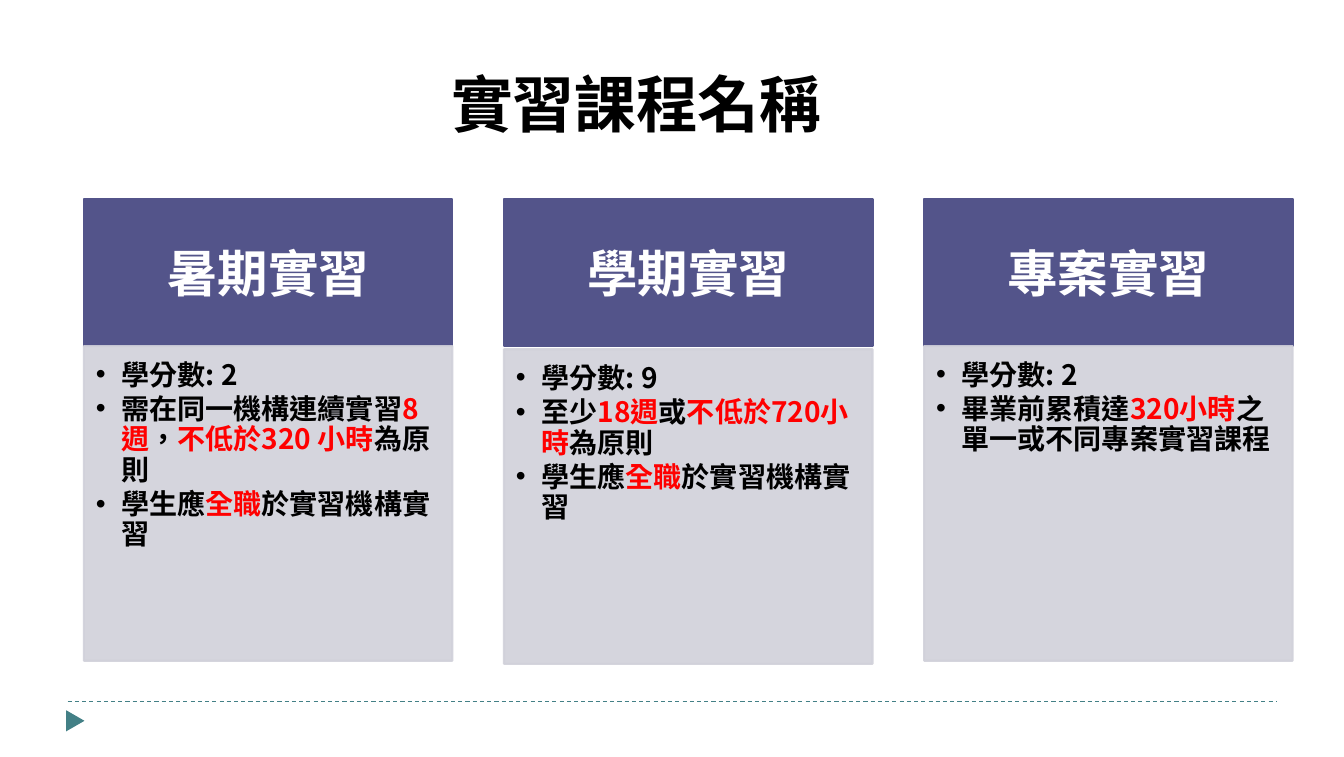
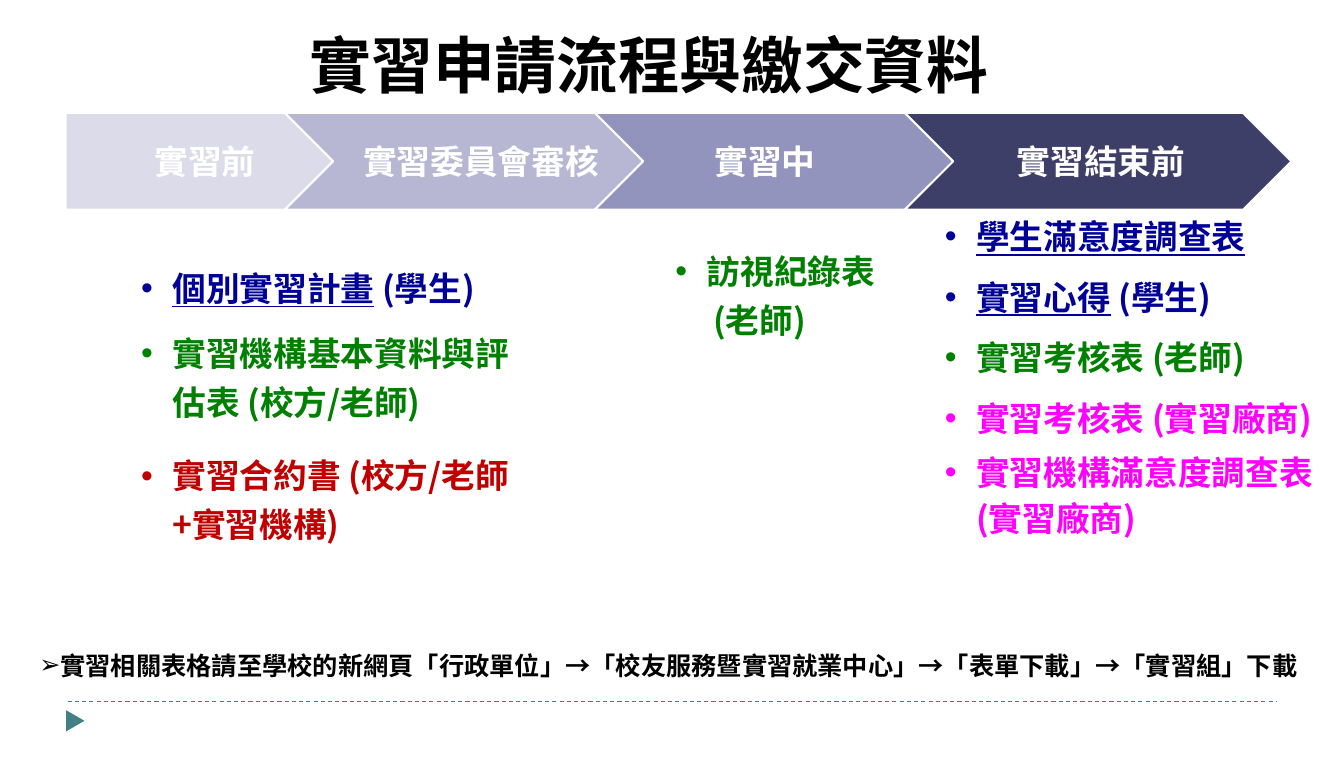
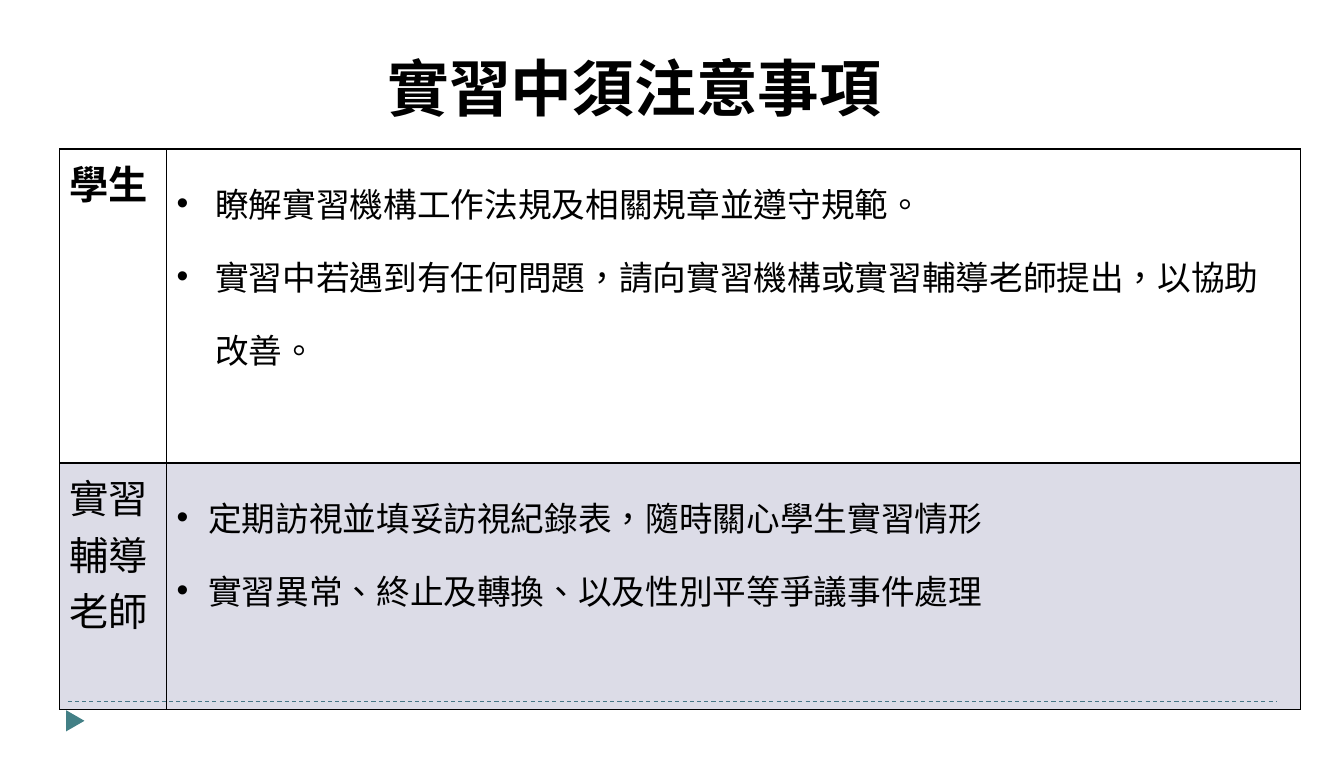
from dataclasses import dataclass

from lxml import etree
from pptx import Presentation
from pptx import util as u
from pptx.dml.color import RGBColor
from pptx.enum import dml, shapes, text
from pptx.oxml.ns import qn


@dataclass(frozen=True)
class Theme:
    font: str = "Noto Sans CJK SC"
    language: str = "zh-TW"
    black: str = "000000"
    white: str = "FFFFFF"
    red: str = "FF0000"
    navy: str = "000099"
    green: str = "008000"
    crimson: str = "C00000"
    magenta: str = "FF00FF"
    teal: str = "438086"
    indigo: str = "53548A"
    mist: str = "D1D1DA"
    steps: tuple = ("DBDBE9", "B7B7D4", "9394BE", "3E3F68")
    title: int = 44
    heading: int = 36
    label: int = 28
    body: int = 24
    card: int = 20
    note: int = 18


THEME = Theme()
LEFT, CENTER = text.PP_ALIGN.LEFT, text.PP_ALIGN.CENTER
TOP, MIDDLE = text.MSO_ANCHOR.TOP, text.MSO_ANCHOR.MIDDLE
HANG = 0.79


@dataclass(frozen=True)
class Span:
    text: str
    color: str = THEME.black
    underline: bool = False


@dataclass(frozen=True)
class Para:
    spans: tuple
    size: int
    bold: bool = True
    align: int = LEFT
    spacing: object = None
    before: float = 0
    after: float = 0
    margin: float = 0
    indent: float = 0
    bullet: str = ""


def leading(size, lines=1.0):
    return u.Pt(round(1.2 * size * lines, 1))


def bullet(*spans, size=THEME.body, lines=1.5, hang=HANG, **options):
    options.setdefault("spacing", leading(size, lines))
    return Para(spans, size, margin=hang, indent=-hang, bullet="•", **options)


def heading(words, size, **options):
    return Para((Span(words, THEME.white),), size, spacing=leading(size), **options)


def write_span(para, span, style):
    run = para.add_run()
    run.text = span.text
    font = run.font
    font.size = u.Pt(style.size)
    font.bold = style.bold
    font.underline = span.underline
    font.color.rgb = RGBColor.from_string(span.color)
    font.name = THEME.font
    properties = run._r.get_or_add_rPr()
    properties.set("lang", THEME.language)
    etree.SubElement(properties, qn("a:ea"), typeface=THEME.font)


def write(frame, paras, anchor=TOP, insets=(0.25, 0.13, 0.25, 0.13)):
    frame.word_wrap = True
    frame.auto_size = text.MSO_AUTO_SIZE.NONE
    frame.vertical_anchor = anchor
    (frame.margin_left, frame.margin_top,
     frame.margin_right, frame.margin_bottom) = map(u.Cm, insets)
    write_paras(frame, paras)


def write_paras(frame, paras):
    for index, style in enumerate(paras):
        para = frame.add_paragraph() if index else frame.paragraphs[0]
        para.alignment = style.align
        para.line_spacing = style.spacing
        para.space_before = u.Pt(style.before)
        para.space_after = u.Pt(style.after)
        properties = para._p.get_or_add_pPr()
        properties.set("marL", str(u.Cm(style.margin)))
        properties.set("indent", str(u.Cm(style.indent)))
        if style.bullet:
            etree.SubElement(properties, qn("a:buFont"), typeface="Arial")
            etree.SubElement(properties, qn("a:buChar"), char=style.bullet)
        for span in style.spans:
            write_span(para, span, style)


def set_opacity(element, percent):
    for color in element.iter(qn("a:srgbClr")):
        etree.SubElement(color, qn("a:alpha"), val=str(percent * 1000))


def add_shape(page, kind, area, fill, line=None):
    shape = page.shapes.add_shape(kind, *map(u.Cm, area))
    shape.shadow.inherit = False
    shape.fill.solid()
    shape.fill.fore_color.rgb = RGBColor.from_string(fill)
    if line:
        shape.line.color.rgb = RGBColor.from_string(line)
        shape.line.width = u.Pt(1.5)
    else:
        shape.line.fill.background()
    return shape


def add_text(page, area, paras):
    write(page.shapes.add_textbox(*map(u.Cm, area)).text_frame, paras)


def add_page(deck, layout, title, left, top, width):
    page = deck.slides.add_slide(layout)
    box = page.shapes.title
    box.left, box.top, box.width, box.height = map(u.Cm, (left, top, width, 2.64))
    write(box.text_frame, [Para((Span(title),), THEME.title)], MIDDLE)
    return page


def add_layout_footer(page, layout):
    for placeholder in list(layout.placeholders)[1:]:
        placeholder.element.getparent().remove(placeholder.element)
    rule = page.shapes.add_connector(
        shapes.MSO_CONNECTOR.STRAIGHT, *map(u.Cm, (1.7, 17.65, 32.1, 17.65)))
    rule.line.color.rgb = RGBColor.from_string(THEME.teal)
    rule.line.width = u.Pt(0.75)
    rule.line.dash_style = dml.MSO_LINE.DASH
    etree.SubElement(rule.element.spPr, qn("a:effectLst"))
    marker = add_shape(page, shapes.MSO_SHAPE.ISOSCELES_TRIANGLE,
                       (1.63, 17.91, 0.53, 0.46), THEME.teal)
    marker.rotation = 90
    for part in (rule, marker):
        layout.shapes.element.append(part.element)


def add_card(page, left, body_top, name, items):
    width = 9.27
    header = add_shape(page, shapes.MSO_SHAPE.RECTANGLE, (left, 5, width, 3.71),
                       THEME.indigo, THEME.indigo)
    write(header.text_frame, [heading(name, THEME.heading, align=CENTER)], MIDDLE)
    body = add_shape(page, shapes.MSO_SHAPE.RECTANGLE, (left, body_top, width, 7.92),
                     THEME.mist, THEME.mist)
    set_opacity(body.element.spPr, 90)
    paras = [bullet(*spans, size=THEME.card, lines=0.9, hang=0.64, after=3)
             for spans in items]
    write(body.text_frame, paras, insets=(0.3, 0.36, 0.41, 0.43))


def add_step(page, index, name, align, margin):
    first = index == 0
    kind = shapes.MSO_SHAPE.PENTAGON if first else shapes.MSO_SHAPE.CHEVRON
    left = 1.65 if first else 7.16 + 7.8 * (index - 1)
    step = add_shape(page, kind, (left, 2.84, 7.47 if first else 9.73, 2.44),
                     THEME.steps[index], THEME.white)
    write(step.text_frame, [heading(name, THEME.body, align=align, margin=margin)],
          MIDDLE, (0.25, 0.18, 0.1, 0.18))


def add_borders(cell):
    properties = cell.get_or_add_tcPr()
    for position, side in enumerate(("lnL", "lnR", "lnT", "lnB")):
        line = etree.Element(qn("a:" + side), w=str(u.Pt(1)))
        fill = etree.SubElement(line, qn("a:solidFill"))
        etree.SubElement(fill, qn("a:srgbClr"), val=THEME.black)
        properties.insert(position, line)


def add_grid(page, left, top, widths, rows):
    frame = page.shapes.add_table(
        len(rows), len(widths), u.Cm(left), u.Cm(top),
        u.Cm(sum(widths)), u.Cm(sum(row[0] for row in rows)))
    table = frame.table
    table.first_row = table.horz_banding = False
    for column, width in zip(table.columns, widths):
        column.width = u.Cm(width)
    for row, (height, fill, contents) in zip(table.rows, rows):
        row.height = u.Cm(height)
        for cell, paras in zip(row.cells, contents):
            if fill:
                cell.fill.solid()
                cell.fill.fore_color.rgb = RGBColor.from_string(fill)
                set_opacity(cell._tc.tcPr, 20)
            else:
                cell.fill.background()
            add_borders(cell._tc)
            write_paras(cell.text_frame, paras)


def fill_courses(page):
    full_time = (Span("學生應"), Span("全職", THEME.red), Span("於實習機構實習"))
    courses = (
        (8.71, "暑期實習", (
            (Span("學分數: 2"),),
            (Span("需在同一機構連續實習"), Span("8週", THEME.red), Span("，"),
             Span("不低於320 小時", THEME.red), Span("為原則")),
            full_time)),
        (8.79, "學期實習", (
            (Span("學分數: 9"),),
            (Span("至少"), Span("18週", THEME.red), Span("或"),
             Span("不低於720小時", THEME.red), Span("為原則")),
            full_time)),
        (8.71, "專案實習", (
            (Span("學分數: 2"),),
            (Span("畢業前累積達"), Span("320小時", THEME.red),
             Span("之單一或不同專案實習課程")))),
    )
    for index, course in enumerate(courses):
        add_card(page, 2.11 + 10.57 * index, *course)


def fill_process(page):
    steps = (("實習前", CENTER, 0), ("實習委員會審核", CENTER, 0),
             ("實習中", LEFT, 1.55), ("實習結束前", CENTER, 0))
    for index, step in enumerate(steps):
        add_step(page, index, *step)
    student = Span(" (學生)", THEME.navy)
    add_text(page, (3.3, 6.1, 10.39, 8), [
        bullet(Span("個別實習計畫", THEME.navy, True), student),
        bullet(Span("實習機構基本資料與評估表 (校方/老師)", THEME.green),
               lines=1.2, before=12, after=12),
        bullet(Span("實習合約書 (校方/老師+實習機構)", THEME.crimson),
               lines=1.2, before=6, after=12),
    ])
    add_text(page, (16.74, 6.19, 6.02, 2.8), [
        bullet(Span("訪視紀錄表", THEME.green), lines=1),
        Para((Span("(老師)", THEME.green),), THEME.body,
             spacing=leading(THEME.body), before=6, margin=0.95),
    ])
    add_text(page, (23.52, 4.8, 9.88, 10.5), [
        bullet(Span("學生滿意度調查表", THEME.navy, True)),
        bullet(Span("實習心得", THEME.navy, True), student),
        bullet(Span("實習考核表 (老師)", THEME.green)),
        bullet(Span("實習考核表 (實習廠商)", THEME.magenta)),
        bullet(Span("實習機構滿意度調查表 (實習廠商)", THEME.magenta),
               lines=1.14, before=6),
    ])
    note = Span("實習相關表格請至學校的新網頁「行政單位」→「校友服務暨實習就業中心」"
                "→「表單下載」→「實習組」下載")
    add_text(page, (0, 15.85, 33.81, 1.42), [
        Para((note,), THEME.note, spacing=leading(THEME.note, 1.5),
             margin=HANG, indent=-0.05, bullet="➢")])


def fill_duties(page):
    def duties(hang, *lines):
        return [bullet(Span(line), hang=hang, bold=False, spacing=1.5)
                for line in lines]

    def role(name, bold):
        return [Para((Span(name),), THEME.label, bold)]

    add_grid(page, 1.5, 3.75, (2.69, 28.52), (
        (7.9, None, (role("學生", True), duties(
            0.97,
            "瞭解實習機構工作法規及相關規章並遵守規範。",
            "實習中若遇到有任何問題，請向實習機構或實習輔導老師提出，以協助改善。"))),
        (6.2, THEME.indigo, (role("實習輔導老師", False), duties(
            HANG,
            "定期訪視並填妥訪視紀錄表，隨時關心學生實習情形",
            "實習異常、終止及轉換、以及性別平等爭議事件處理"))),
    ))


def main():
    deck = Presentation()
    deck.slide_width, deck.slide_height = u.Cm(33.81), u.Cm(19.05)
    layout = deck.slide_layouts[5]
    courses = add_page(deck, layout, "實習課程名稱", 11.1, 1.27, 10.85)
    add_layout_footer(courses, layout)
    fill_courses(courses)
    fill_process(add_page(deck, layout, "實習申請流程與繳交資料", 7.54, 0.28, 18.21))
    fill_duties(add_page(deck, layout, "實習中須注意事項", 9.5, 0.86, 13.06))
    deck.save("out.pptx")


if __name__ == "__main__":
    main()
